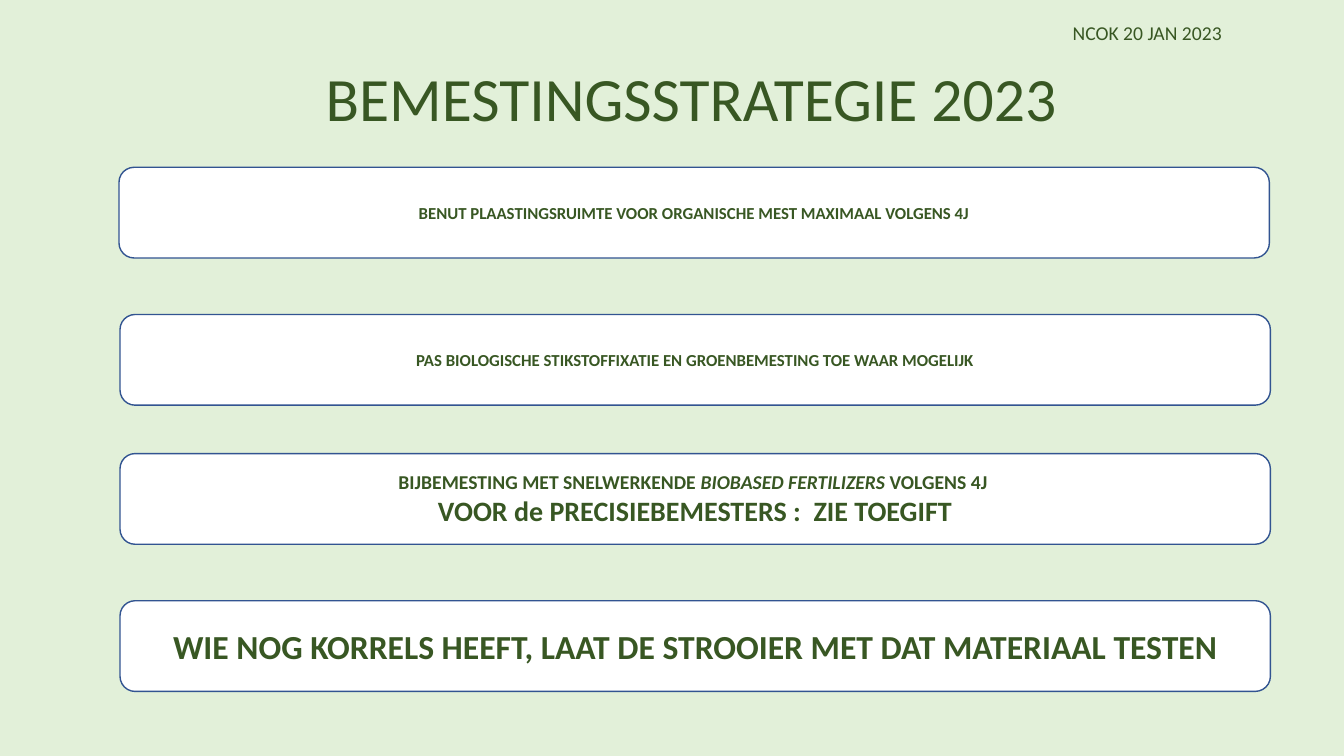
import pptx
import pptx.util
import pptx.dml.color
import pptx.enum.shapes
import pptx.enum.text

PX = 9144
FONT = "Calibri"
MINT = pptx.dml.color.RGBColor(0xE2, 0xF0, 0xD9)
GREEN = pptx.dml.color.RGBColor(0x38, 0x57, 0x23)
BLUE = pptx.dml.color.RGBColor(0x32, 0x54, 0x91)
WHITE = pptx.dml.color.RGBColor(0xFF, 0xFF, 0xFF)
ALIGN = pptx.enum.text.PP_ALIGN
ANCHOR = pptx.enum.text.MSO_ANCHOR

CARDS = [
    (118, 166, [(12, ["BENUT PLAASTINGSRUIMTE VOOR ORGANISCHE MEST MAXIMAAL VOLGENS 4J"])]),
    (119, 312, [(12, ["PAS BIOLOGISCHE STIKSTOFFIXATIE EN GROENBEMESTING TOE WAAR MOGELIJK"])]),
    (119, 450, [
        (14, ["BIJBEMESTING MET SNELWERKENDE ", "BIOBASED FERTILIZERS ", "VOLGENS 4J "]),
        (20, ["VOOR de PRECISIEBEMESTERS :  ZIE TOEGIFT"]),
    ]),
    (119, 596, [(24, ["WIE NOG KORRELS HEEFT, LAAT DE STROOIER MET DAT MATERIAAL TESTEN"])]),
]


def scale(*sizes):
    return [pptx.util.Emu(size * PX) for size in sizes]


def style(run, size, bold=False, slant=False):
    font = run.font
    font.name = FONT
    font.size = pptx.util.Pt(size)
    font.bold = bold
    font.italic = slant
    font.color.rgb = GREEN


def label(shape, text, size):
    frame = shape.text_frame
    frame.text = text
    frame.word_wrap = True
    frame.vertical_anchor = ANCHOR.TOP
    para = frame.paragraphs[0]
    para.alignment = ALIGN.LEFT
    style(para.runs[0], size)


def add_title(slide, text):
    title = slide.shapes.title
    title.left, title.top, title.width, title.height = scale(313, 54, 753, 84)
    label(title, text, 44)


def add_date(slide, text):
    label(slide.shapes.add_textbox(*scale(1054, 16, 179, 34)), text, 14)


def add_card(slide, left, top, lines):
    kind = pptx.enum.shapes.MSO_SHAPE.ROUNDED_RECTANGLE
    card = slide.shapes.add_shape(kind, *scale(left, top, 1141, 90))
    card.shadow.inherit = False
    card.fill.solid()
    card.fill.fore_color.rgb = WHITE
    card.line.color.rgb = BLUE
    card.line.width = pptx.util.Pt(1)
    frame = card.text_frame
    frame.word_wrap = True
    frame.vertical_anchor = ANCHOR.MIDDLE
    for row, (size, parts) in enumerate(lines):
        para = frame.add_paragraph() if row else frame.paragraphs[0]
        para.alignment = ALIGN.CENTER
        for spot, part in enumerate(parts):
            run = para.add_run()
            run.text = part
            style(run, size, bold=True, slant=spot == 1)


def main():
    deck = pptx.Presentation()
    deck.slide_width, deck.slide_height = scale(1333, 750)
    slide = deck.slides.add_slide(deck.slide_layouts[5])
    fill = slide.background.fill
    fill.solid()
    fill.fore_color.rgb = MINT
    add_title(slide, "BEMESTINGSSTRATEGIE 2023")
    for left, top, lines in CARDS:
        add_card(slide, left, top, lines)
    add_date(slide, "NCOK 20 JAN 2023")
    deck.save("out.pptx")


if __name__ == "__main__":
    main()
